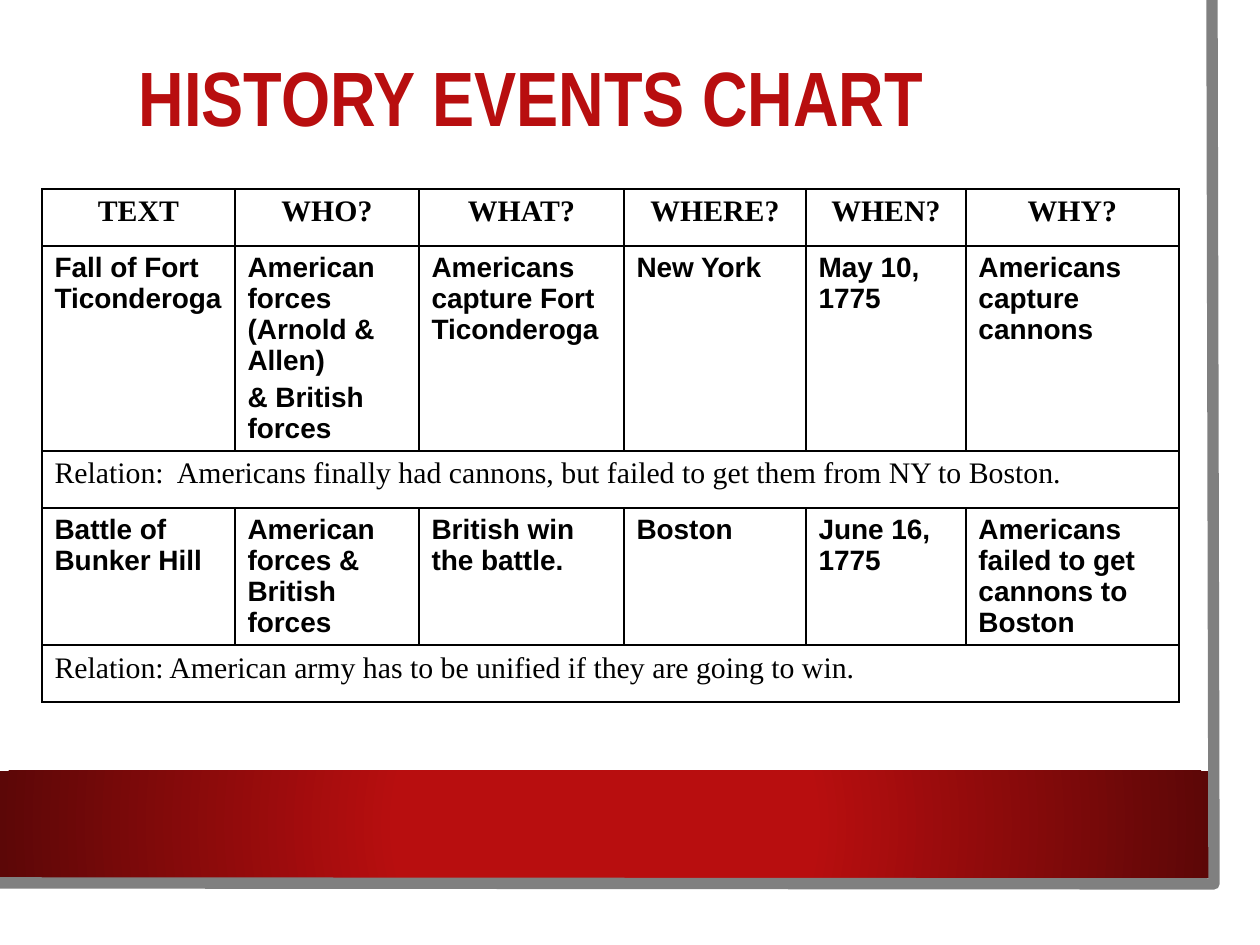
from dataclasses import dataclass

from lxml.etree import SubElement
from pptx import Presentation
from pptx.dml.color import RGBColor as RGB
from pptx.enum.shapes import MSO_SHAPE as Shape
from pptx.enum.text import MSO_ANCHOR as Anchor, PP_ALIGN as Align
from pptx.oxml import parse_xml
from pptx.oxml.ns import nsdecls, qn
from pptx.util import Pt

SCALE = 914400 / 126
COLORS = {"red": "B80E0F", "dark": "5C0707", "gray": "808080",
          "white": "FFFFFF", "black": "000000"}
COLS = [193, 184, 205, 182, 160, 213]


@dataclass
class Style:
    face: str
    size: int
    bold: bool
    color: str = "black"
    align: Align = Align.LEFT


@dataclass
class Row:
    height: int
    style: Style
    texts: list[str]


TITLE = Style("Arial Narrow", 44, True, "red")
HEAD = Style("Times New Roman", 17, True, align=Align.CENTER)
EVENT = Style("Arial", 16, True)
NOTE = Style("Times New Roman", 17, False)

ROWS = [
    Row(57, HEAD, ["TEXT", "WHO?", "WHAT?", "WHERE?", "WHEN?", "WHY?"]),
    Row(205, EVENT, ["Fall of Fort Ticonderoga",
                     "American forces (Arnold & Allen)\n& British forces",
                     "Americans capture Fort Ticonderoga", "New York",
                     "May 10, 1775", "Americans capture cannons"]),
    Row(57, NOTE, ["Relation:  Americans finally had cannons, but failed "
                   "to get them from NY to Boston."]),
    Row(137, EVENT, ["Battle of Bunker Hill",
                     "American forces & British forces",
                     "British win the battle.", "Boston", "June 16, 1775",
                     "Americans failed to get cannons to Boston"]),
    Row(57, NOTE, ["Relation: American army has to be unified if they are "
                   "going to win."]),
]


def px(n: int) -> int:
    return round(n * SCALE)


def rgb(name: str) -> RGB:
    return RGB.from_string(COLORS[name])


def write(frame, text: str, style: Style) -> None:
    frame.text = text
    for i, para in enumerate(frame.paragraphs):
        para.alignment = style.align
        if i:
            para.space_before = Pt(0.2 * style.size)
        for run in para.runs:
            font = run.font
            form = {"name": style.face, "size": Pt(style.size),
                    "bold": style.bold}
            for key, value in form.items():
                setattr(font, key, value)
            font.color.rgb = rgb(style.color)


def rim(cell) -> None:
    """Give a cell thin black borders on all sides."""
    props = cell._tc.get_or_add_tcPr()
    for i, side in enumerate(("lnL", "lnR", "lnT", "lnB")):
        line = SubElement(props, qn(f"a:{side}"), w=str(Pt(1)))
        fill = SubElement(line, qn("a:solidFill"))
        SubElement(fill, qn("a:srgbClr"), val=COLORS["black"])
        props.insert(i, line)


def block(slide, *box: int):
    shape = slide.shapes.add_shape(Shape.RECTANGLE, *map(px, box))
    shape.shadow.inherit = False
    shape.line.fill.background()
    shape.fill.solid()
    shape.fill.fore_color.rgb = rgb("white")
    return shape


def glow(shape) -> None:
    """Fill a shape with red that darkens away from its centre."""
    props = shape._element.spPr
    old = props.find(qn("a:solidFill"))
    props.replace(old, parse_xml(
        f'<a:gradFill {nsdecls("a")} rotWithShape="1"><a:gsLst>'
        f'<a:gs pos="34000"><a:srgbClr val="{COLORS["red"]}"/></a:gs>'
        f'<a:gs pos="100000"><a:srgbClr val="{COLORS["dark"]}"/></a:gs>'
        '</a:gsLst><a:path path="circle"><a:fillToRect l="50000" t="50000" '
        'r="50000" b="50000"/></a:path></a:gradFill>'))


def edge(slide) -> None:
    """Draw the thick gray line down the right and along the bottom."""
    pen = slide.shapes.build_freeform(1212, 0, scale=SCALE)
    pen.add_line_segments([(1214, 884), (-2, 883)], close=False)
    line = pen.convert_to_shape()
    line.shadow.inherit = False
    line.fill.background()
    line.line.color.rgb = rgb("gray")
    line.line.width = Pt(6.5)


def head(slide) -> None:
    title = slide.shapes.title
    box = {"left": 126, "top": 38, "width": 1071, "height": 127}
    for key, value in box.items():
        setattr(title, key, px(value))
    write(title.text_frame, "HISTORY EVENTS CHART", TITLE)
    title.text_frame.vertical_anchor = Anchor.MIDDLE
    title.text_frame.paragraphs[0].line_spacing = 0.9
    slide.shapes._spTree.append(title._element)


def chart(slide) -> None:
    high = sum(row.height for row in ROWS)
    table = slide.shapes.add_table(len(ROWS), len(COLS), px(42), px(189),
                                   px(sum(COLS)), px(high)).table
    table.first_row = table.horz_banding = False
    for col, wide in zip(table.columns, COLS):
        col.width = px(wide)
    for r, row in enumerate(ROWS):
        table.rows[r].height = px(row.height)
        for c in range(len(COLS)):
            cell = table.cell(r, c)
            cell.fill.background()
            rim(cell)
        if len(row.texts) == 1:
            table.cell(r, 0).merge(table.cell(r, len(COLS) - 1))
        for c, text in enumerate(row.texts):
            write(table.cell(r, c).text_frame, text, row.style)


def main() -> None:
    deck = Presentation()
    deck.slide_width, deck.slide_height = px(1260), px(945)
    slide = deck.slides.add_slide(deck.slide_layouts[5])
    block(slide, 0, 0, 1239, 916)
    glow(block(slide, 0, 771, 1210, 107))
    edge(slide)
    head(slide)
    chart(slide)
    deck.save("out.pptx")


if __name__ == "__main__":
    main()
